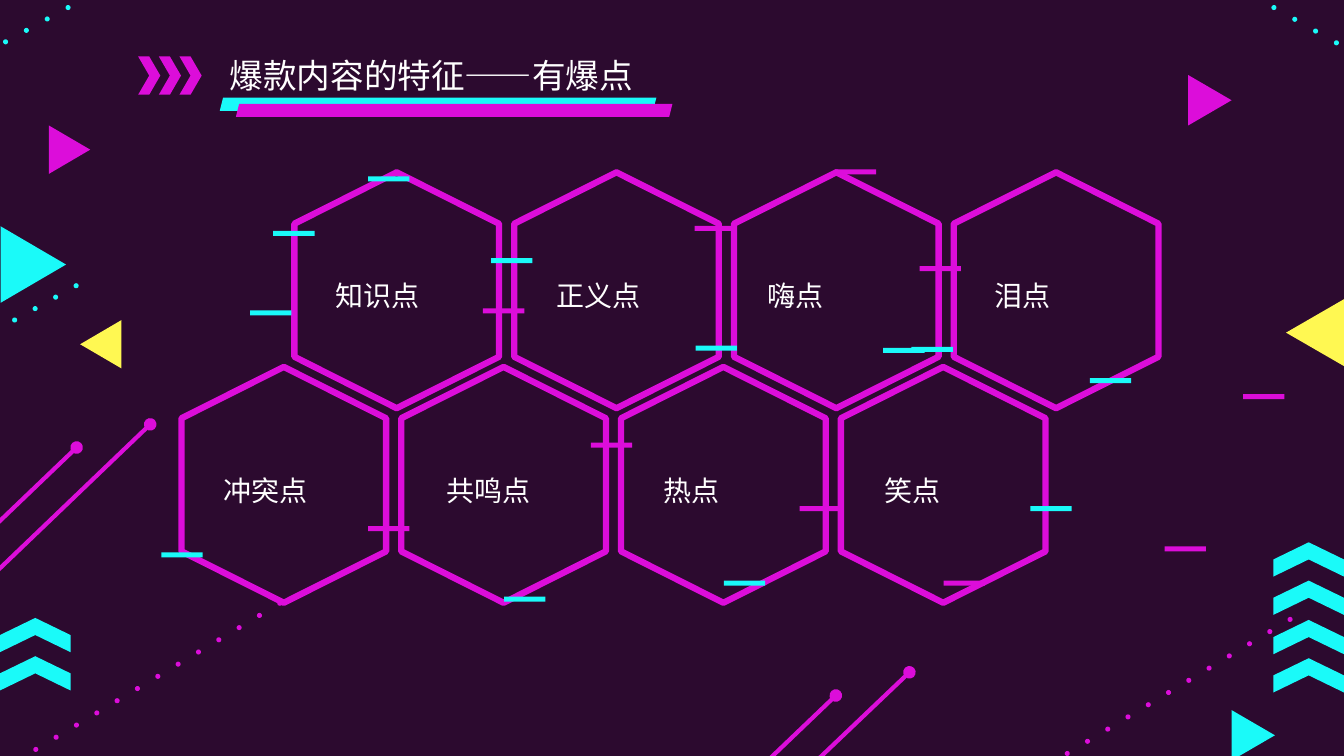
from dataclasses import dataclass
from lxml.etree import SubElement
from pptx import Presentation
from pptx.dml.color import RGBColor
from pptx.enum.shapes import MSO_CONNECTOR, MSO_SHAPE
from pptx.enum.text import MSO_AUTO_SIZE, PP_ALIGN
from pptx.oxml.ns import qn
from pptx.util import Inches, Pt


@dataclass(frozen=True)
class Theme:
    back: str = "2C0A2F"
    pink: str = "DC0DDA"
    cyan: str = "1AFAF9"
    gold: str = "FFF852"
    white: str = "FFFFFF"
    font: str = "Noto Sans CJK SC"
    title: int = 24
    label: int = 20
    beam: float = 3
    edge: float = 4.5


class Deck:
    """Holds the theme and the current slide."""

    def __init__(self, theme):
        self.theme = theme
        self.prs = Presentation()
        self.prs.slide_width, self.prs.slide_height = Inches(13.33), Inches(7.5)
        self.slide = self.prs.slides.add_slide(self.prs.slide_layouts[6])
        fill = self.slide.background.fill
        fill.solid()
        fill.fore_color.rgb = RGBColor.from_string(theme.back)
        self.shapes = self.slide.shapes

    def shape(self, kind, box, color, turn=0):
        item = self.shapes.add_shape(kind, *map(Inches, box))
        item.shadow.inherit = False
        item.fill.solid()
        item.fill.fore_color.rgb = RGBColor.from_string(color)
        item.line.fill.background()
        item.rotation = turn

    def dots(self, start, end, count, color):
        for i in range(count):
            x, y = (a + (b - a) * i / (count - 1) for a, b in zip(start, end))
            self.shape(MSO_SHAPE.OVAL, (x, y, 0.05, 0.05), color)

    def dash(self, x, y, color):
        self.shape(MSO_SHAPE.RECTANGLE, (x, y, 0.41, 0.05), color)

    def beam(self, start, end):
        line = self.shapes.add_connector(
            MSO_CONNECTOR.STRAIGHT, *map(Inches, (*start, *end)))
        line.line.color.rgb = RGBColor.from_string(self.theme.pink)
        line.line.width = Pt(self.theme.beam)
        props = line._element.spPr
        for tag in ("a:headEnd", "a:tailEnd"):
            SubElement(props.find(qn("a:ln")), qn(tag), type="oval")
        SubElement(props, qn("a:effectLst"))

    def hexagon(self, x, y):
        wide, high, cut = 2.03, 2.34, 0.51
        points = [(x + wide / 2, y), (x + wide, y + cut),
                  (x + wide, y + high - cut), (x + wide / 2, y + high),
                  (x, y + high - cut), (x, y + cut)]
        first, *rest = [(Inches(a), Inches(b)) for a, b in points]
        form = self.shapes.build_freeform(*first)
        form.add_line_segments(rest, close=True)
        item = form.convert_to_shape()
        item.shadow.inherit = False
        item.fill.background()
        item.line.color.rgb = RGBColor.from_string(self.theme.pink)
        item.line.width = Pt(self.theme.edge)

    def text(self, words, box, size, space=1.0):
        frame = self.shapes.add_textbox(*map(Inches, box)).text_frame
        frame.word_wrap = True
        frame.auto_size = MSO_AUTO_SIZE.SHAPE_TO_FIT_TEXT
        para = frame.paragraphs[0]
        para.text = words
        para.alignment = PP_ALIGN.JUSTIFY
        para.line_spacing = space
        para.font.size = Pt(size)
        para.font.color.rgb = RGBColor.from_string(self.theme.white)
        para.font.name = self.theme.font
        props = para._p.pPr.find(qn("a:defRPr"))
        SubElement(props, qn("a:ea"), typeface=self.theme.font)

    def save(self):
        self.prs.save("out.pptx")


def main():
    theme = Theme()
    pink, cyan, gold = theme.pink, theme.cyan, theme.gold
    deck = Deck(theme)

    # Triangles at the edges
    for box, color, turn in [
        ((-0.05, 2.3, 0.76, 0.65), cyan, 90),
        ((12.71, 3.01, 0.67, 0.58), gold, 270),
        ((12.18, 7.08, 0.5, 0.43), cyan, 90),
        ((0.45, 1.28, 0.48, 0.41), pink, 90),
        ((11.75, 0.78, 0.5, 0.43), pink, 90),
        ((0.76, 3.21, 0.48, 0.41), gold, 270),
    ]:
        deck.shape(MSO_SHAPE.ISOSCELES_TRIANGLE, box, color, turn)

    # Upward chevrons in the lower corners
    for x, tops in [(0.18, (6.33, 5.95)), (12.81, (6.35, 5.97, 5.58, 5.2))]:
        for y in tops:
            deck.shape(MSO_SHAPE.CHEVRON, (x, y, 0.34, 0.7), cyan, 270)

    # Dotted trails
    for start, end, count, color in [
        ((0.12, 3.15), (0.73, 2.81), 4, cyan),
        ((0.03, 0.39), (0.65, 0.05), 4, cyan),
        ((12.61, 0.05), (13.23, 0.4), 4, cyan),
        ((10.56, 7.45), (12.77, 6.12), 12, pink),
        ((0.33, 7.41), (2.75, 5.96), 13, pink),
    ]:
        deck.dots(start, end, count, color)

    # Slanted beams
    for start, end in [
        ((-0.16, 5.32), (0.76, 4.44)), ((-0.18, 5.81), (1.49, 4.21)),
        ((7.37, 7.78), (8.29, 6.9)), ((7.35, 8.26), (9.02, 6.67)),
    ]:
        deck.beam(start, end)

    # Title with its chevrons and double bar
    deck.text("爆款内容的特征——有爆点", (2.18, 0.5, 4.41, 0.5), theme.title)
    for i in range(3):
        deck.shape(MSO_SHAPE.CHEVRON, (1.37 + 0.205 * i, 0.56, 0.22, 0.38), pink)
    for x, y, color in [(2.18, 0.97, cyan), (2.34, 1.03, pink)]:
        deck.shape(MSO_SHAPE.PARALLELOGRAM, (x, y, 4.33, 0.13), color)

    # Two staggered rows of labelled hexagons
    pitch = 2.18
    for left, top, labels in [
        (2.92, 1.71, [("知识点", 3.23), ("正义点", 5.42),
                      ("嗨点", 7.51), ("泪点", 9.77)]),
        (1.8, 3.64, [("冲突点", 2.12), ("共鸣点", 4.33),
                     ("热点", 6.48), ("笑点", 8.67)]),
    ]:
        for i, (words, x) in enumerate(labels):
            deck.hexagon(left + pitch * i, top)
            deck.text(words, (x, top + 0.84, 1.37, 0.55), theme.label, 1.5)

    # Glitch dashes
    for color, spots in [
        (pink, [(12.33, 3.91), (11.55, 5.42), (9.36, 5.76), (7.93, 5.02),
                (5.86, 4.39), (3.65, 5.22), (4.79, 3.06), (6.89, 2.24),
                (8.28, 1.68), (9.12, 2.64)]),
        (cyan, [(2.71, 2.29), (3.65, 1.75), (2.48, 3.08), (1.6, 5.48),
                (5, 5.92), (7.18, 5.76), (4.87, 2.56), (6.9, 3.43),
                (8.76, 3.45), (9.04, 3.44), (10.81, 3.75), (10.22, 5.02)]),
    ]:
        for x, y in spots:
            deck.dash(x, y, color)

    deck.save()


if __name__ == "__main__":
    main()
